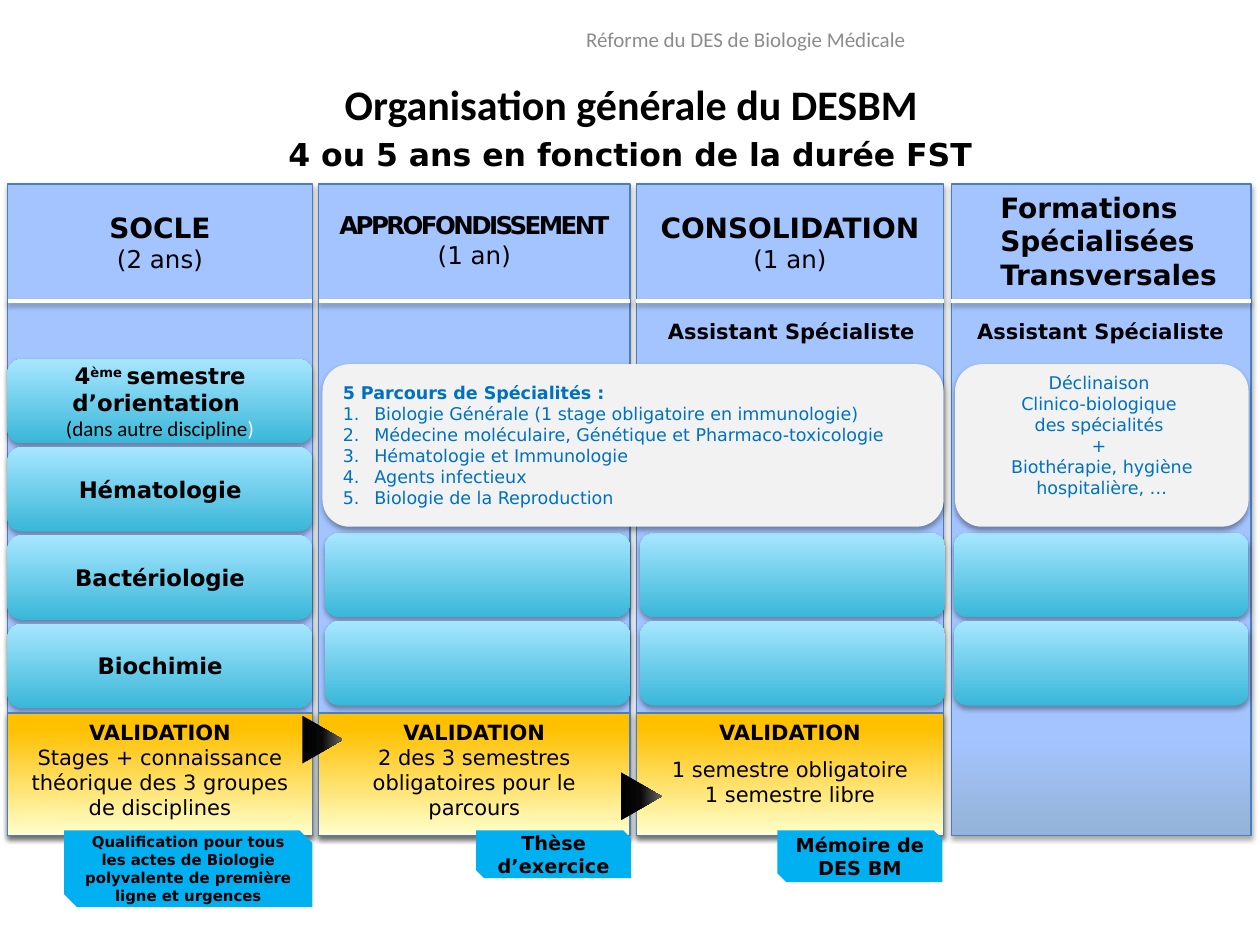
"""Builds the slide on the general organisation of the DESBM."""
from dataclasses import dataclass, replace
from typing import NamedTuple, Optional

from lxml import etree
from pptx import Presentation
from pptx.dml.color import RGBColor
from pptx.enum.shapes import MSO_CONNECTOR, MSO_SHAPE
from pptx.enum.text import MSO_ANCHOR, PP_ALIGN
from pptx.oxml.ns import qn
from pptx.util import Inches, Pt

RECT, ROUND = MSO_SHAPE.RECTANGLE, MSO_SHAPE.ROUNDED_RECTANGLE
TRIANGLE, SNIPPED = MSO_SHAPE.FLOWCHART_EXTRACT, MSO_SHAPE.SNIP_2_DIAG_RECTANGLE
STRAIGHT = MSO_CONNECTOR.STRAIGHT
TOP, MIDDLE = MSO_ANCHOR.TOP, MSO_ANCHOR.MIDDLE
LEFT, CENTER = PP_ALIGN.LEFT, PP_ALIGN.CENTER

COLUMN_FILL = ((0, "95B3D7"), (15, "A4C4FF"))
TILE_FILL = ((0, "39B7D8"), (100, "A7E6FF"))
VALIDATION_FILL = ((0, "FFFFCC"), (87, "FFC000"))
ARROW_FILL = ((0, "000000"), (48, "080808"), (100, "666666"))
PANEL, TAG, BLUE, EDGE = "F2F2F2", "00B0F0", "0070C0", "4B7EBC"

COLUMN_TOP, COLUMN_HEIGHT, HEADER_BOTTOM = 1.46, 5.17, 2.39
TILE_HEIGHT, TILE_STEP = 0.67, 0.7
ASSISTANT_TOP, PANEL_TOP, PANEL_HEIGHT = 2.46, 2.89, 1.29
VALIDATION_TOP, VALIDATION_HEIGHT, TAG_TOP = 5.66, 0.97, 6.59


class Box(NamedTuple):
    """A place on the slide, in inches."""
    left: float
    top: float
    width: float
    height: float


@dataclass(frozen=True)
class Run:
    """A stretch of text with its format."""
    text: str
    size: float = 12
    bold: bool = False
    color: str = "000000"
    font: str = "DejaVu Sans"
    raised: int = 0
    spacing: float = 0


@dataclass(frozen=True)
class Para:
    """A paragraph made of runs."""
    runs: tuple
    align: PP_ALIGN = CENTER
    indent: float = 0
    numbered: bool = False
    before: float = 0


@dataclass(frozen=True)
class Column:
    """A year of the course, from its header to its validation."""
    left: float
    width: float
    header: tuple
    header_inset: float
    validation: tuple
    tile_left: float
    tile_width: float
    tile_top: float
    tiles: tuple


def rgb(value: str) -> RGBColor:
    return RGBColor.from_string(value)


def line_para(text: str, align=CENTER, indent=0, numbered=False, before=0, **style) -> Para:
    return Para((Run(text, **style),), align, indent, numbered, before)


def write(shape, paras, anchor=MIDDLE, top=0.05, bottom=0.05, wrap=True) -> None:
    """Fills a shape with formatted paragraphs."""
    frame = shape.text_frame
    frame.word_wrap, frame.vertical_anchor = wrap, anchor
    frame.margin_top, frame.margin_bottom = Inches(top), Inches(bottom)
    for index, para in enumerate(paras):
        target = frame.add_paragraph() if index else frame.paragraphs[0]
        target.alignment = para.align
        if para.before:
            target.space_before = Pt(para.before)
        props = target._p.get_or_add_pPr()
        if para.indent:
            props.set("marL", str(Inches(para.indent)))
            props.set("indent", str(-Inches(para.indent) if para.numbered else 0))
        if para.numbered:
            etree.SubElement(props, qn("a:buAutoNum"), type="arabicPeriod")
        for part in para.runs:
            run = target.add_run()
            run.text = part.text.rstrip("\n")
            run.font.size, run.font.bold, run.font.name = Pt(part.size), part.bold, part.font
            run.font.color.rgb = rgb(part.color)
            if part.raised:
                run._r.get_or_add_rPr().set("baseline", str(part.raised * 1000))
            if part.spacing:
                run._r.get_or_add_rPr().set("spc", str(int(part.spacing * 100)))
            if part.text.endswith("\n"):
                target.add_line_break()


def set_shadow(shape, shown: bool) -> None:
    """Gives a shape a soft shadow below it, or none."""
    props = shape._element.spPr
    effects = props.find(qn("a:effectLst"))
    if effects is None:
        effects = etree.SubElement(props, qn("a:effectLst"))
    if shown:
        outer = etree.SubElement(effects, qn("a:outerShdw"), blurRad=str(Pt(3.1)),
                                 dist=str(Pt(1.8)), dir="5400000", rotWithShape="0")
        color = etree.SubElement(outer, qn("a:srgbClr"), val="000000")
        etree.SubElement(color, qn("a:alpha"), val="35000")


def set_gradient(shape, stops) -> None:
    """Fills a shape with colours that run from bottom to top."""
    shape.fill.gradient()
    shape.fill.gradient_angle = 90
    stop_list = shape._element.spPr.find(".//" + qn("a:gsLst"))
    for old in list(stop_list):
        stop_list.remove(old)
    for share, color in stops:
        stop = etree.SubElement(stop_list, qn("a:gs"), pos=str(share * 1000))
        etree.SubElement(stop, qn("a:srgbClr"), val=color)


def draw(slide, kind, box: Box, fill=None, edge: Optional[str] = None, shadow=False):
    """Adds a preset shape with a plain, graded or empty fill."""
    shape = slide.shapes.add_shape(kind, *map(Inches, box))
    shape.shadow.inherit = False
    if fill is None:
        shape.fill.background()
    elif isinstance(fill, str):
        shape.fill.solid()
        shape.fill.fore_color.rgb = rgb(fill)
    else:
        set_gradient(shape, fill)
    if edge:
        shape.line.color.rgb, shape.line.width = rgb(edge), Pt(0.75)
    else:
        shape.line.fill.background()
    set_shadow(shape, shadow)
    return shape


def header(name: str, size=16, spacing=0) -> tuple:
    title, years = name.split("|")
    return (line_para(title, size=size, bold=True, spacing=spacing), line_para(years, size=14))


def validation(*lines: str, before=0) -> tuple:
    first, *others = lines
    return (line_para("VALIDATION", bold=True), line_para(first, before=before),
            *(line_para(other) for other in others))


def subject(name: str) -> tuple:
    return (line_para(name, size=13, bold=True),)


STRONG = Run("4", size=13, bold=True)
ASIDE = Run("(dans autre discipline", font="Calibri")
ORIENTATION = (Para((STRONG, replace(STRONG, text="ème ", raised=30),
                     replace(STRONG, text="semestre d’orientation \n"),
                     ASIDE, replace(ASIDE, text=")", color="FFFFFF"))),)
SUBJECTS = (ORIENTATION, *map(subject, ("Hématologie", "Bactériologie", "Biochimie")))
COLUMNS = (
    Column(0.06, 2.42, header("SOCLE|(2 ans)"), 0.21,
           validation("Stages + connaissance théorique des 3 groupes de disciplines"),
           0.06, 2.42, 2.85, SUBJECTS),
    Column(2.53, 2.47, header("APPROFONDISSEMENT|(1 an)", 14, -1.5), 0.21,
           validation("2 des 3 semestres obligatoires pour le parcours"),
           2.58, 2.42, 4.23, ((), ())),
    Column(5.05, 2.44, header("CONSOLIDATION|(1 an)"), 0.21,
           validation("1 semestre obligatoire", "1 semestre libre", before=7),
           5.08, 2.42, 4.23, ((), ())),
    Column(7.55, 2.38, tuple(line_para(word, LEFT, 0.29, size=16, bold=True) for word in
                             ("Formations", "Spécialisées", "Transversales")), 0.05,
           (), 7.57, 2.34, 4.23, ((), ())),
)
PATHWAYS = ("Biologie Générale (1 stage obligatoire en immunologie)",
            "Médecine moléculaire, Génétique et Pharmaco-toxicologie",
            "Hématologie et Immunologie", "Agents infectieux", "Biologie de la Reproduction")
VARIANTS = ("Déclinaison ", "Clinico-biologique ", "des spécialités ", "+ ",
            "Biothérapie, hygiène hospitalière, …")
TAGS = (
    (Box(0.51, TAG_TOP, 1.97, 0.61), 8.5, "Qualification pour tous les actes de Biologie "
     "polyvalente de première ligne et urgences"),
    (Box(3.78, TAG_TOP, 1.23, 0.38), 11, "Thèse d’exercice"),
    (Box(6.17, TAG_TOP, 1.31, 0.41), 11, "Mémoire de DES BM"),
)


def draw_headings(slide) -> None:
    """Places the title, the running head and the subtitle."""
    title = slide.shapes.title
    title.left, title.top, title.width, title.height = map(Inches, (0.51, 0.48, 9, 0.69))
    write(title, [line_para("Organisation générale du DESBM", size=24, bold=True, font="Calibri")])
    running_head = slide.shapes.add_textbox(*map(Inches, (3.78, 0, 4.28, 0.62)))
    write(running_head, [line_para("Réforme du DES de Biologie Médicale", color="8C8C8C",
                                   font="Calibri")])
    subtitle = slide.shapes.add_textbox(*map(Inches, (2.19, 1.02, 5.63, 0.4)))
    write(subtitle, [line_para("4 ou 5 ans en fonction de la durée FST", LEFT, size=18,
                               bold=True)], TOP, wrap=False)


def draw_column(slide, column: Column) -> None:
    """Draws a column with its header and subject tiles."""
    body = Box(column.left, COLUMN_TOP, column.width, COLUMN_HEIGHT)
    write(draw(slide, RECT, body, COLUMN_FILL, EDGE, True), column.header, TOP,
          column.header_inset)
    for row, text in enumerate(column.tiles):
        place = Box(column.tile_left, column.tile_top + row * TILE_STEP,
                    column.tile_width, TILE_HEIGHT)
        write(draw(slide, ROUND, place, TILE_FILL, shadow=True), text)


def draw_panels(slide) -> None:
    """Draws the pathways, their variants and the assistant labels."""
    pathways = draw(slide, ROUND, Box(2.56, PANEL_TOP, 4.93, PANEL_HEIGHT), PANEL, shadow=True)
    write(pathways, [line_para("5 Parcours de Spécialités :", LEFT, size=10, bold=True, color=BLUE),
                     *(line_para(name, LEFT, 0.25, True, size=10, color=BLUE)
                       for name in PATHWAYS)])
    variants = draw(slide, ROUND, Box(7.58, PANEL_TOP, 2.33, PANEL_HEIGHT), PANEL, shadow=True)
    write(variants, [line_para(name, size=10, color=BLUE) for name in VARIANTS], bottom=0.21)
    for left, width in ((5.07, 2.42), (7.54, 2.39)):
        label = draw(slide, ROUND, Box(left, ASSISTANT_TOP, width, 0.43))
        write(label, [line_para("Assistant Spécialiste", bold=True)], TOP)


def draw_outcomes(slide) -> None:
    """Draws the validations, the arrows between them, the tags and the header rules."""
    for column in COLUMNS:
        if column.validation:
            place = Box(column.left, VALIDATION_TOP, column.width, VALIDATION_HEIGHT)
            write(draw(slide, RECT, place, VALIDATION_FILL, EDGE, True), column.validation, TOP)
    for left, top in ((2.37, 5.71), (4.9, 6.16)):
        draw(slide, TRIANGLE, Box(left, top, 0.38, 0.32), ARROW_FILL).rotation = 90
    for place, size, text in TAGS:
        write(draw(slide, SNIPPED, place, TAG), [line_para(text, size=size, bold=True)])
    for column in COLUMNS:
        rule = slide.shapes.add_connector(STRAIGHT, *map(Inches, (
            column.left, HEADER_BOTTOM, column.left + column.width, HEADER_BOTTOM)))
        rule.line.color.rgb, rule.line.width = rgb("FFFFFF"), Pt(2)
        set_shadow(rule, True)


def main() -> None:
    deck = Presentation()
    deck.slide_width, deck.slide_height = Inches(10), Inches(7.5)
    slide = deck.slides.add_slide(deck.slide_layouts[5])
    draw_headings(slide)
    for column in COLUMNS:
        draw_column(slide, column)
    draw_panels(slide)
    draw_outcomes(slide)
    deck.save("out.pptx")


if __name__ == "__main__":
    main()
